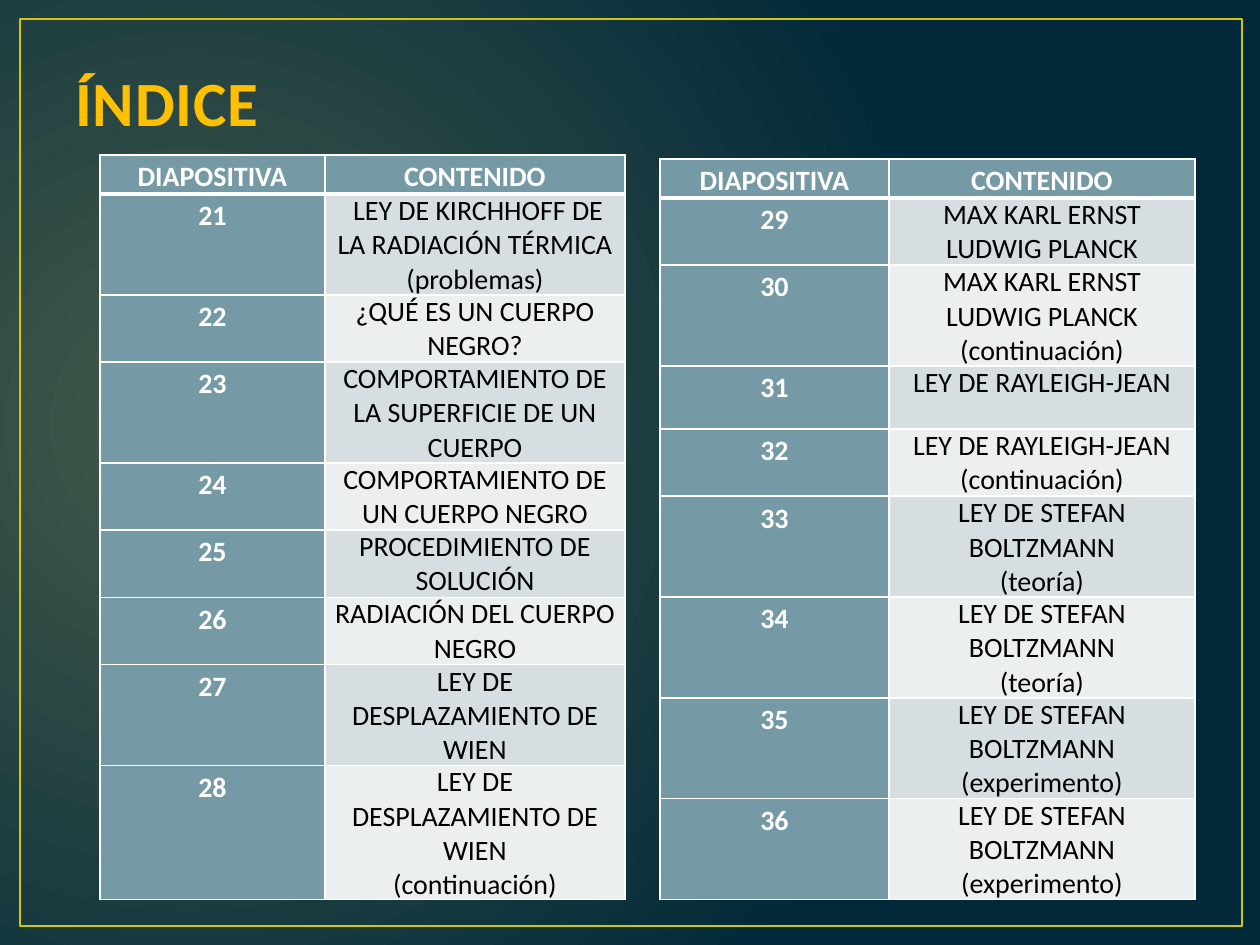
import dataclasses

import lxml.etree
import pptx
import pptx.dml.color
import pptx.enum.shapes
import pptx.enum.text
import pptx.oxml.ns
import pptx.util

PX = 914400 / 126


@dataclasses.dataclass(frozen=True)
class Theme:
    font: str = "Calibri"
    title_size: int = 36
    body_size: int = 16
    glow: str = "445A49"
    night: str = "01293A"
    frame: str = "CFC60D"
    title: str = "FFC000"
    title_edge: str = "384F55"
    white: str = "FFFFFF"
    black: str = "000000"
    label_fill: str = "759AA5"
    bands: tuple = ("D6DEE1", "ECEFF0")


THEME = Theme()

HEADINGS = ("DIAPOSITIVA", "CONTENIDO")
WIEN = "LEY DE DESPLAZAMIENTO DE WIEN"
PLANCK = "MAX KARL ERNST LUDWIG PLANCK"
RAYLEIGH = "LEY DE RAYLEIGH-JEAN"
STEFAN = "LEY DE STEFAN BOLTZMANN"
CONTINUED = "(continuación)"
THEORY = "(teoría)"
EXPERIMENT = "(experimento)"

FIRST_TOPICS = [
    (" LEY DE KIRCHHOFF DE LA RADIACIÓN TÉRMICA", "(problemas)"),
    ("¿QUÉ ES UN CUERPO NEGRO?",),
    ("COMPORTAMIENTO DE LA SUPERFICIE DE UN CUERPO",),
    ("COMPORTAMIENTO DE UN CUERPO NEGRO",),
    ("PROCEDIMIENTO DE SOLUCIÓN",),
    ("RADIACIÓN DEL CUERPO NEGRO",),
    (WIEN,),
    (WIEN, CONTINUED),
]
SECOND_TOPICS = [
    (PLANCK,),
    (PLANCK, CONTINUED),
    (RAYLEIGH,),
    (RAYLEIGH, CONTINUED),
    (STEFAN, THEORY),
    (STEFAN, THEORY),
    (STEFAN, EXPERIMENT),
    (STEFAN, EXPERIMENT),
]


def px(length):
    return pptx.util.Emu(round(length * PX))


def rgb(code):
    return pptx.dml.color.RGBColor.from_string(code)


def make_line(tag, color, points):
    line = lxml.etree.Element(pptx.oxml.ns.qn(tag), w=str(round(points * 12700)))
    fill = lxml.etree.SubElement(line, pptx.oxml.ns.qn("a:solidFill"))
    lxml.etree.SubElement(fill, pptx.oxml.ns.qn("a:srgbClr"), val=color)
    return line


def add_span(para, text, size, color, bold):
    span = para.add_run()
    span.text = text
    span.font.name = THEME.font
    span.font.size = pptx.util.Pt(size)
    span.font.bold = bold
    span.font.color.rgb = rgb(color)
    return span


def paint_background(page):
    fill = page.background.fill
    fill.gradient()
    for stop, color in zip(fill.gradient_stops, (THEME.glow, THEME.night)):
        stop.color.rgb = rgb(color)
    linear = next(page.element.iter(pptx.oxml.ns.qn("a:lin")))
    circle = lxml.etree.Element(pptx.oxml.ns.qn("a:path"), path="circle")
    lxml.etree.SubElement(
        circle, pptx.oxml.ns.qn("a:fillToRect"), l="15000", t="50000", r="85000", b="60000"
    )
    linear.getparent().replace(linear, circle)


def add_frame(page, left, top, width, height):
    kind = pptx.enum.shapes.MSO_SHAPE.RECTANGLE
    box = page.shapes.add_shape(kind, px(left), px(top), px(width), px(height))
    box.shadow.inherit = False
    box.fill.background()
    box.line.color.rgb = rgb(THEME.frame)
    box.line.width = pptx.util.Pt(1.5)


def add_title(page, text, left, top, width, height):
    box = page.shapes.add_textbox(px(left), px(top), px(width), px(height))
    frame = box.text_frame
    frame.word_wrap = True
    frame.vertical_anchor = pptx.enum.text.MSO_ANCHOR.BOTTOM
    span = add_span(frame.paragraphs[0], text, THEME.title_size, THEME.title, True)
    properties = span.font._element
    properties.set("spc", "50")
    properties.insert(0, make_line("a:ln", THEME.title_edge, 1.05))


def fill_cell(cell, lines, fill, color, bold, spacing, top_edge, bottom_edge):
    cell.margin_left = cell.margin_right = px(9)
    cell.margin_top = cell.margin_bottom = 0
    cell.fill.solid()
    cell.fill.fore_color.rgb = rgb(fill)
    for index, text in enumerate(lines):
        para = cell.text_frame.add_paragraph() if index else cell.text_frame.paragraphs[0]
        para.alignment = pptx.enum.text.PP_ALIGN.CENTER
        para.line_spacing = spacing
        add_span(para, text, THEME.body_size, color, bold)
    edges = {"a:lnL": 1, "a:lnR": 1, "a:lnT": top_edge, "a:lnB": bottom_edge}
    properties = cell._tc.get_or_add_tcPr()
    for index, (tag, points) in enumerate(edges.items()):
        properties.insert(index, make_line(tag, THEME.white, points))


def add_index(page, left, top, height, widths, heights, first_number, topics):
    holder = page.shapes.add_table(
        len(topics) + 1, len(widths), px(left), px(top), px(sum(widths)), px(height)
    )
    table = holder.table
    table.horz_banding = False
    for column, width in zip(table.columns, widths):
        column.width = px(width)
    for row, row_height in zip(table.rows, heights):
        row.height = px(row_height)
    holder.height = px(height)

    for column, heading in enumerate(HEADINGS):
        fill_cell(table.cell(0, column), (heading,), THEME.label_fill, THEME.white, True, 1.15, 1, 3)
    for index, lines in enumerate(topics):
        row = index + 1
        top_edge = 1 if index else 3
        number = str(first_number + index)
        fill_cell(
            table.cell(row, 0), (number,), THEME.label_fill, THEME.white, True, 1.15, top_edge, 1
        )
        band = THEME.bands[index % 2]
        fill_cell(table.cell(row, 1), lines, band, THEME.black, False, 1.0, top_edge, 1)


def main():
    deck = pptx.Presentation()
    deck.slide_width, deck.slide_height = px(1260), px(945)
    page = deck.slides.add_slide(deck.slide_layouts[6])
    paint_background(page)
    add_frame(page, 20, 19, 1222, 907)
    add_title(page, "ÍNDICE", 63, 38, 239, 107)
    first_heights = (39, 47, 47, 47, 45, 44, 66, 50, 64)
    add_index(page, 100, 155, 745, (225, 300), first_heights, 21, FIRST_TOPICS)
    second_heights = (39, 63, 63, 63, 63, 63, 43, 42, 39)
    add_index(page, 660, 159, 741, (229, 306), second_heights, 29, SECOND_TOPICS)
    deck.save("out.pptx")


if __name__ == "__main__":
    main()
